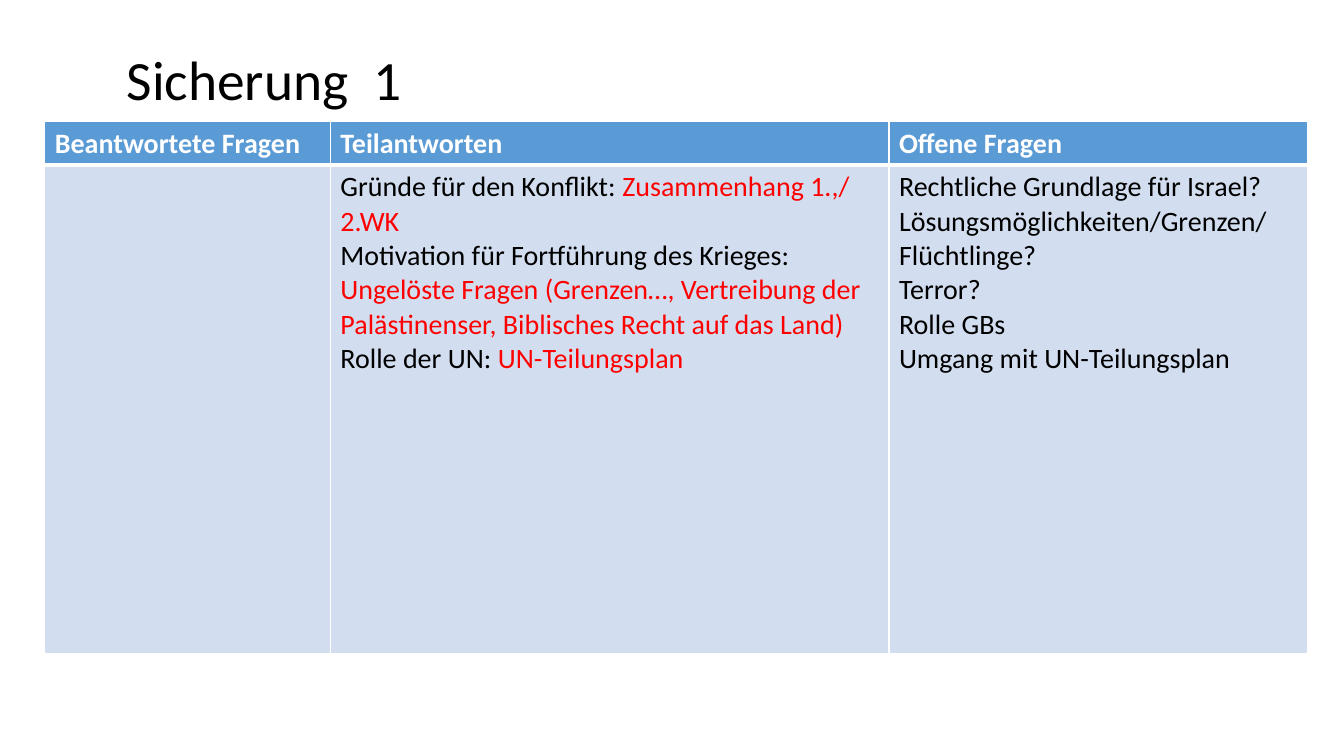
from lxml.etree import SubElement
from pptx import Presentation
from pptx.dml.color import RGBColor
from pptx.enum.text import MSO_ANCHOR
from pptx.oxml.ns import qn
from pptx.util import Pt

BLACK = RGBColor(0x00, 0x00, 0x00)
WHITE = RGBColor(0xFF, 0xFF, 0xFF)
RED = RGBColor(0xFF, 0x00, 0x00)
HEADER_BLUE = RGBColor(0x5B, 0x9B, 0xD5)
BODY_BLUE = RGBColor(0xD2, 0xDE, 0xEF)

HEADERS = ["Beantwortete Fragen", "Teilantworten", "Offene Fragen"]
PARTIAL_ANSWERS = [
    ("Gründe für den Konflikt: ", "Zusammenhang 1.,/ 2.WK"),
    ("Motivation für Fortführung des Krieges: ",
     "Ungelöste Fragen (Grenzen…, Vertreibung der Palästinenser, "
     "Biblisches Recht auf das Land)"),
    ("Rolle der UN: ", "UN-Teilungsplan"),
]
OPEN_QUESTIONS = [
    "Rechtliche Grundlage für Israel?",
    "Lösungsmöglichkeiten/Grenzen/Flüchtlinge?",
    "Terror?",
    "Rolle GBs",
    "Umgang mit UN-Teilungsplan",
]


class SlideBuilder:
    font_name = "Calibri"
    title_size = 39.6
    table_size = 20

    def __init__(self, slide):
        self.slide = slide

    def add_text(self, text_frame, paragraphs, size, bold=False):
        """Fill a text frame; each paragraph is a list of (text, colour) runs."""
        for index, runs in enumerate(paragraphs):
            paragraph = text_frame.add_paragraph() if index else text_frame.paragraphs[0]
            for text, colour in runs:
                run = paragraph.add_run()
                run.text = text
                run.font.name = self.font_name
                run.font.size = Pt(size)
                run.font.bold = bold
                run.font.color.rgb = colour

    def title(self, text, left, top, width, height):
        text_frame = self.slide.shapes.add_textbox(
            Pt(left), Pt(top), Pt(width), Pt(height)).text_frame
        text_frame.word_wrap = True
        text_frame.vertical_anchor = MSO_ANCHOR.MIDDLE
        self.add_text(text_frame, [[(text, BLACK)]], self.title_size)
        text_frame.paragraphs[0].line_spacing = 0.9

    def table(self, left, top, column_widths, row_heights):
        table = self.slide.shapes.add_table(
            len(row_heights), len(column_widths), Pt(left), Pt(top),
            Pt(sum(column_widths)), Pt(sum(row_heights))).table
        for column, width in zip(table.columns, column_widths):
            column.width = Pt(width)
        for row, height in zip(table.rows, row_heights):
            row.height = Pt(height)
        return table

    def cell(self, cell, paragraphs, fill, bottom_width=1, top_width=1, bold=False):
        self.add_text(cell.text_frame, paragraphs, self.table_size, bold)
        properties = cell._tc.get_or_add_tcPr()
        borders = {"a:lnL": 1, "a:lnR": 1, "a:lnT": top_width, "a:lnB": bottom_width}
        for tag, width in borders.items():
            line = SubElement(properties, qn(tag), w=str(Pt(width)))
            solid_fill = SubElement(line, qn("a:solidFill"))
            SubElement(solid_fill, qn("a:srgbClr"), val=str(WHITE))
        cell.fill.solid()
        cell.fill.fore_color.rgb = fill


def main():
    presentation = Presentation()
    presentation.slide_width = Pt(960)
    presentation.slide_height = Pt(540)
    builder = SlideBuilder(presentation.slides.add_slide(presentation.slide_layouts[6]))

    builder.title("Sicherung  1", 83.5, 31.7, 684, 54.7)
    table = builder.table(32, 86.7, [204, 399, 299], [31.2, 348.8])

    bodies = [
        [],
        [[(topic, BLACK), (answer, RED)] for topic, answer in PARTIAL_ANSWERS],
        [[(question, BLACK)] for question in OPEN_QUESTIONS],
    ]
    for column, (header, body) in enumerate(zip(HEADERS, bodies)):
        builder.cell(table.cell(0, column), [[(header, WHITE)]], HEADER_BLUE,
                     bottom_width=3, bold=True)
        builder.cell(table.cell(1, column), body, BODY_BLUE, top_width=3)

    presentation.save("out.pptx")


if __name__ == "__main__":
    main()
